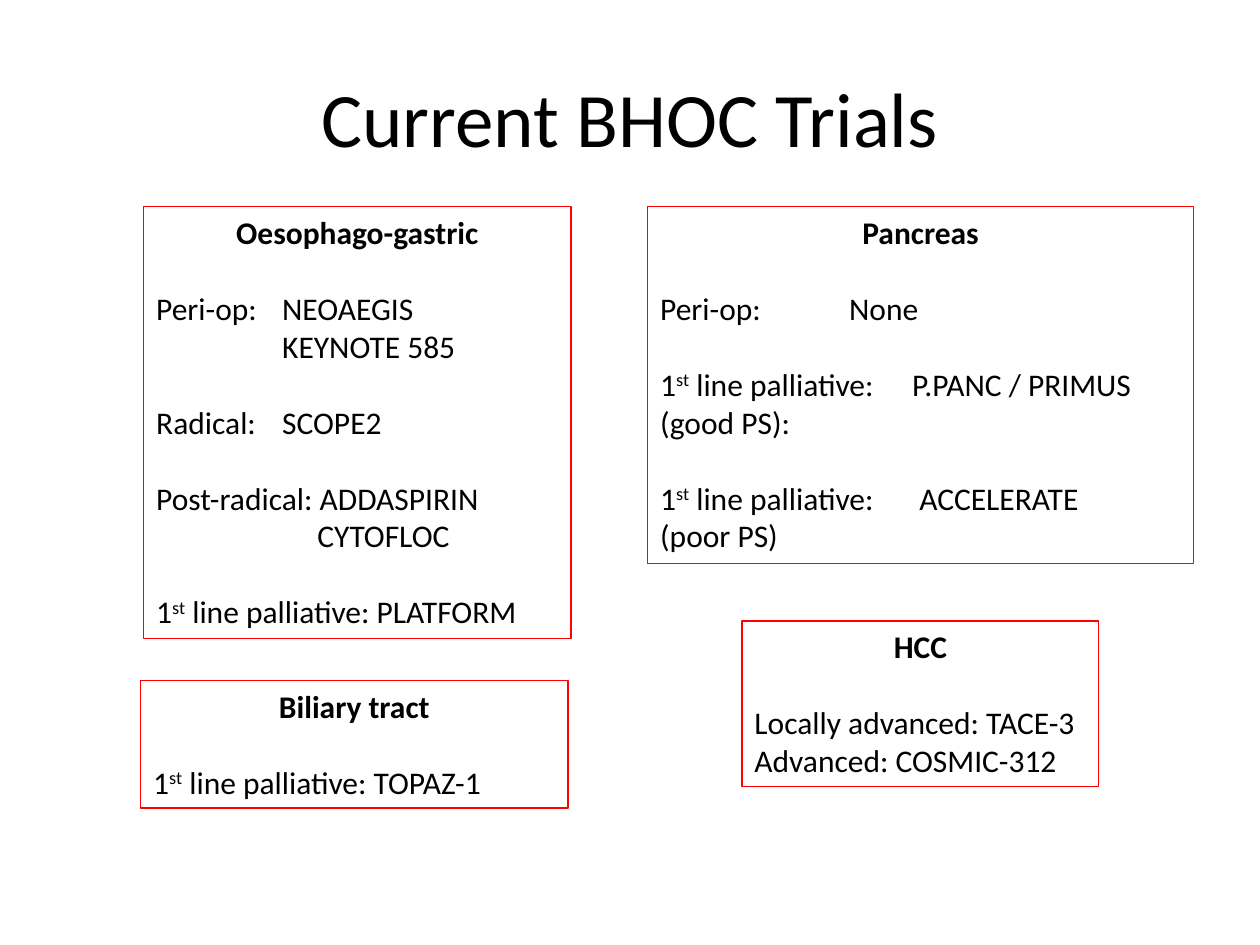
from dataclasses import dataclass

from pptx import Presentation
from pptx.dml.color import RGBColor
from pptx.enum.shapes import MSO_SHAPE as Shape
from pptx.enum.text import MSO_ANCHOR as Anchor, MSO_AUTO_SIZE as AutoSize, PP_ALIGN as Align
from pptx.util import Cm, Pt


@dataclass(frozen=True)
class Theme:
    font: str = "Calibri"
    text: RGBColor = RGBColor(0, 0, 0)
    border: RGBColor = RGBColor(255, 0, 0)
    title_size: Pt = Pt(44)
    body_size: Pt = Pt(18)
    group_gap: Pt = Pt(21.8)
    border_width: Pt = Pt(0.75)


theme = Theme()


def format_run(run, size, bold=False):
    run.font.name = theme.font
    run.font.size = size
    run.font.bold = bold
    run.font.color.rgb = theme.text


def write_line(paragraph, text):
    ordinal, suffix, rest = text.partition("st line")
    if suffix:
        for part in (ordinal, "st", " line" + rest):
            paragraph.add_run().text = part
        paragraph.runs[1].font._element.set("baseline", "30000")
    else:
        paragraph.text = text
    for run in paragraph.runs:
        format_run(run, theme.body_size)


trial_boxes = [
    ("Oesophago-gastric", (2.9, 4.17, 8.61, 8.71), True, [
        [("Peri-op:\tNEOAEGIS", 0), ("KEYNOTE 585", 2.54)],
        [("Radical:\tSCOPE2", 0)],
        [("Post-radical: ADDASPIRIN", 0), ("CYTOFLOC", 3.25)],
        [("1st line palliative: PLATFORM", 0)],
    ]),
    ("Pancreas", (13.06, 4.17, 11, 7.19), True, [
        [("Peri-op:\t\tNone", 0)],
        [("1st line palliative: \tP.PANC / PRIMUS", 0), ("(good PS):", 0)],
        [("1st line palliative:\t ACCELERATE", 0), ("(poor PS)", 0)],
    ]),
    ("Biliary tract", (2.84, 13.72, 8.61, 2.57), True, [
        [("1st line palliative: TOPAZ-1", 0)],
    ]),
    ("HCC", (14.96, 12.52, 7.19, 3.33), False, [
        [("Locally advanced: TACE-3", 0), ("Advanced: COSMIC-312", 0)],
    ]),
]

presentation = Presentation()
presentation.slide_width = Cm(25.4)
presentation.slide_height = Cm(19.05)
slide = presentation.slides.add_slide(presentation.slide_layouts[5])

title = slide.shapes.title
title.left, title.top, title.width, title.height = Cm(1.27), Cm(0.76), Cm(22.86), Cm(3.18)
title.text_frame.text = "Current BHOC Trials"
title.text_frame.vertical_anchor = Anchor.MIDDLE
title.text_frame.paragraphs[0].alignment = Align.CENTER
format_run(title.text_frame.paragraphs[0].runs[0], theme.title_size)

for heading, position, wrap, groups in trial_boxes:
    box = slide.shapes.add_shape(Shape.RECTANGLE, *map(Cm, position))
    box.shadow.inherit = False
    box.fill.background()
    box.line.color.rgb = theme.border
    box.line.width = theme.border_width

    frame = box.text_frame
    frame.word_wrap = wrap
    frame.auto_size = AutoSize.SHAPE_TO_FIT_TEXT
    frame.vertical_anchor = Anchor.TOP
    frame.text = heading
    frame.paragraphs[0].alignment = Align.CENTER
    format_run(frame.paragraphs[0].runs[0], theme.body_size, bold=True)

    for group in groups:
        for index, (text, indent) in enumerate(group):
            paragraph = frame.add_paragraph()
            paragraph.alignment = Align.LEFT
            paragraph.space_before = Pt(0) if index else theme.group_gap
            if indent:
                paragraph._p.get_or_add_pPr().set("marL", str(Cm(indent)))
            write_line(paragraph, text)

presentation.save("out.pptx")
